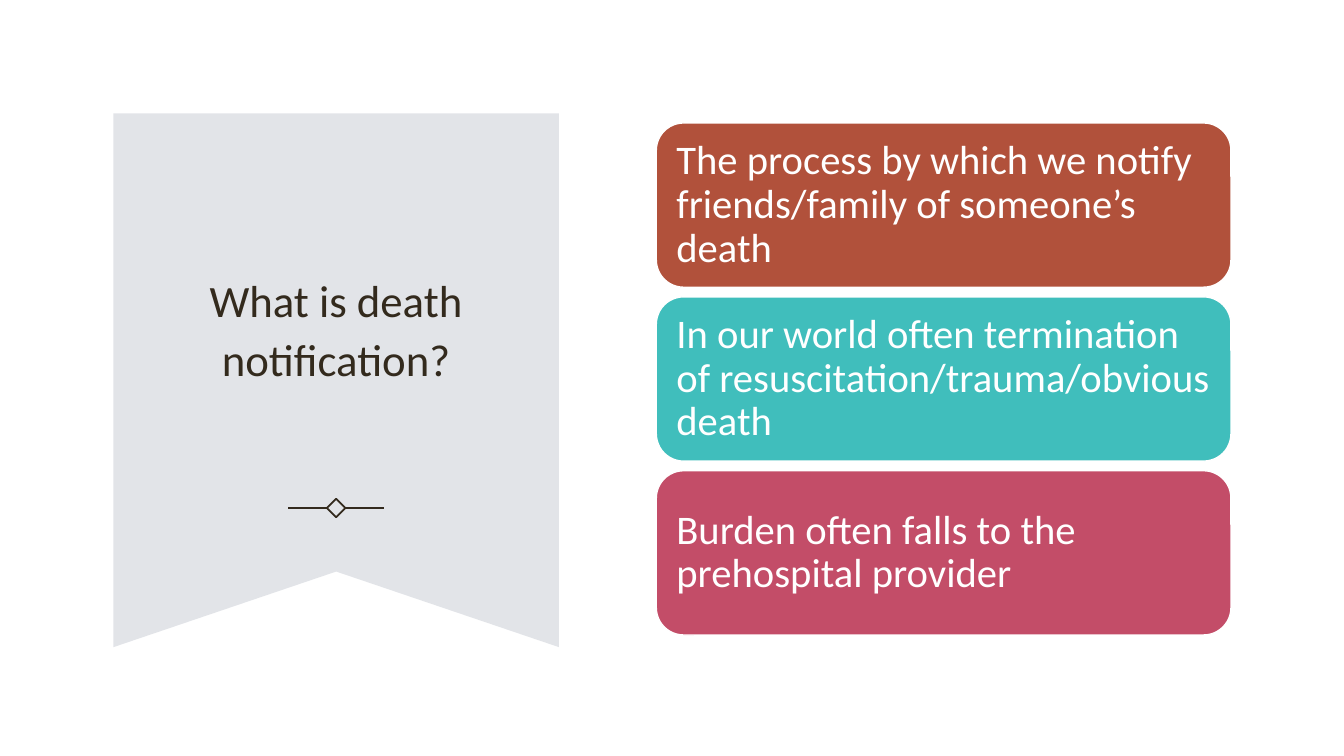
from dataclasses import dataclass

from lxml.etree import SubElement
from pptx import Presentation
from pptx.dml.color import RGBColor
from pptx.enum.shapes import MSO_CONNECTOR, MSO_SHAPE
from pptx.enum.text import MSO_ANCHOR, PP_ALIGN
from pptx.oxml.ns import qn
from pptx.shapes.autoshape import Shape
from pptx.slide import Slide
from pptx.util import Emu, Inches, Pt

WIDTH, HEIGHT = Inches(13.333), Inches(7.5)
FONT = "Calibri"
WHITE = RGBColor(0xFF, 0xFF, 0xFF)
INK = RGBColor(0x33, 0x2A, 0x1D)
PALE_GREY = RGBColor(0xE2, 0xE4, 0xE8)
RUST = RGBColor(0xB1, 0x51, 0x3B)
TEAL = RGBColor(0x40, 0xBE, 0xBC)
ROSE = RGBColor(0xC3, 0x4D, 0x68)


def across(share: float) -> Emu:
    """Percent of the slide's width."""
    return Emu(round(WIDTH * share / 100))


def down(share: float) -> Emu:
    """Percent of the slide's height."""
    return Emu(round(HEIGHT * share / 100))


@dataclass(frozen=True)
class Area:
    """A rectangle in percent of the slide's size."""
    left: float
    top: float
    width: float
    height: float

    def place(self) -> tuple[Emu, Emu, Emu, Emu]:
        return across(self.left), down(self.top), across(self.width), down(self.height)


@dataclass(frozen=True)
class Card:
    text: str
    colour: RGBColor


BANNER = Area(8.44, 15, 33.15, 70.6)
NOTCH = 75.6
TITLE = Area(11.7, 24.13, 26.63, 38)
FIRST_CARD = Area(48.83, 16.27, 42.76, 21.73)
CARD_PITCH = 23
ORNAMENT_X, ORNAMENT_Y = 25.01, 67.2
ARM_START, ARM_END = 0.65, 3.57
SQUARE = Area(ORNAMENT_X - 0.49, ORNAMENT_Y - 0.87, 0.98, 1.74)

CARDS = (
    Card("The process by which we notify friends/family of someone’s death", RUST),
    Card("In our world often termination of resuscitation/trauma/obvious death", TEAL),
    Card("Burden often falls to the prehospital provider", ROSE),
)


def write(shape: Shape, text: str, size: float, colour: RGBColor,
          align: PP_ALIGN, spacing: float) -> None:
    frame = shape.text_frame
    frame.word_wrap = True
    frame.vertical_anchor = MSO_ANCHOR.MIDDLE
    paragraph = frame.paragraphs[0]
    paragraph.text = text
    paragraph.alignment = align
    paragraph.line_spacing = spacing
    paragraph.font.name = FONT
    paragraph.font.size = Pt(size)
    paragraph.font.color.rgb = colour


def draw_banner(page: Slide) -> None:
    right, bottom = BANNER.left + BANNER.width, BANNER.top + BANNER.height
    corners = [(right, BANNER.top), (right, bottom),
               (BANNER.left + BANNER.width / 2, NOTCH), (BANNER.left, bottom)]
    builder = page.shapes.build_freeform(across(BANNER.left), down(BANNER.top))
    builder.add_line_segments([(across(x), down(y)) for x, y in corners], close=True)
    banner = builder.convert_to_shape()
    banner.shadow.inherit = False
    banner.fill.solid()
    banner.fill.fore_color.rgb = PALE_GREY
    banner.line.fill.background()


def draw_ornament(page: Slide) -> None:
    square = page.shapes.add_shape(MSO_SHAPE.RECTANGLE, *SQUARE.place())
    square.shadow.inherit = False
    square.rotation = 45
    square.fill.background()
    square.line.color.rgb = INK
    square.line.width = Pt(1.25)
    for side in (-1, 1):
        arm = page.shapes.add_connector(
            MSO_CONNECTOR.STRAIGHT,
            across(ORNAMENT_X + side * ARM_START), down(ORNAMENT_Y),
            across(ORNAMENT_X + side * ARM_END), down(ORNAMENT_Y))
        arm.line.color.rgb = INK
        arm.line.width = Pt(1.25)
        SubElement(arm._element.spPr, qn("a:effectLst"))


def draw_card(page: Slide, card: Card, area: Area) -> None:
    box = page.shapes.add_shape(MSO_SHAPE.ROUNDED_RECTANGLE, *area.place())
    box.shadow.inherit = False
    box.fill.solid()
    box.fill.fore_color.rgb = card.colour
    box.line.color.rgb = WHITE
    box.line.width = Pt(1)
    frame = box.text_frame
    frame.margin_left = frame.margin_right = Inches(0.12)
    frame.margin_top = frame.margin_bottom = Inches(0.12)
    write(box, card.text, 29, WHITE, PP_ALIGN.LEFT, 0.9)


def main() -> None:
    deck = Presentation()
    deck.slide_width, deck.slide_height = WIDTH, HEIGHT
    page = deck.slides.add_slide(deck.slide_layouts[6])

    # Banner with the title and ornament
    draw_banner(page)
    title = page.shapes.add_textbox(*TITLE.place())
    write(title, "What is death notification?", 32, INK, PP_ALIGN.CENTER, 1.1)
    draw_ornament(page)

    # Stacked cards
    for row, card in enumerate(CARDS):
        top = FIRST_CARD.top + row * CARD_PITCH
        draw_card(page, card, Area(FIRST_CARD.left, top, FIRST_CARD.width, FIRST_CARD.height))

    deck.save("out.pptx")


if __name__ == "__main__":
    main()
